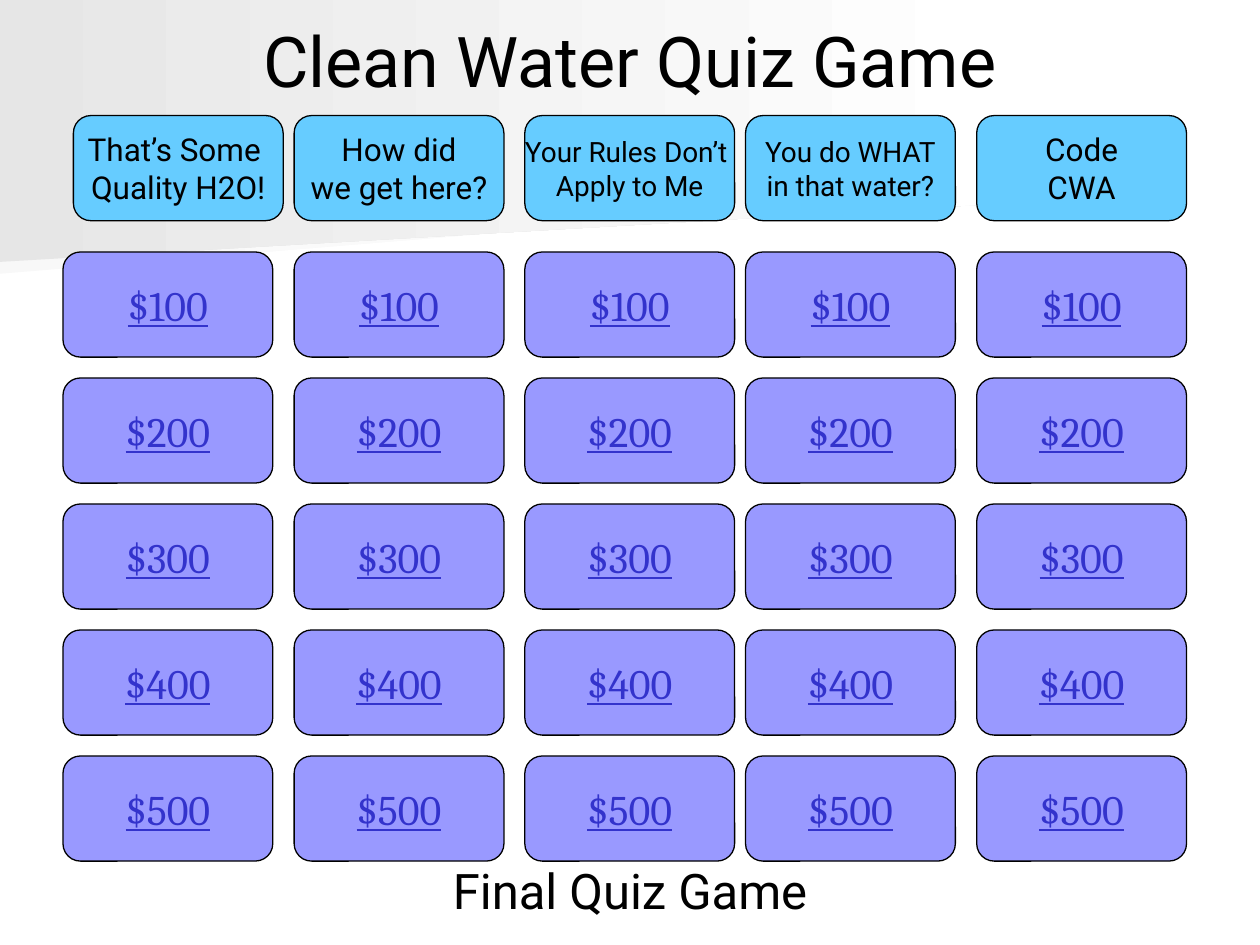
from pptx import Presentation
from pptx.dml.color import RGBColor
from pptx.enum.shapes import MSO_SHAPE
from pptx.enum.text import MSO_ANCHOR, PP_ALIGN
from pptx.util import Cm, Pt

BLACK = RGBColor(0x00, 0x00, 0x00)
WHITE = RGBColor(0xFF, 0xFF, 0xFF)
PALE = RGBColor(0xF8, 0xF8, 0xF8)
GRAY = RGBColor(0xE6, 0xE6, 0xE6)
SKY = RGBColor(0x66, 0xCC, 0xFF)
LILAC = RGBColor(0x99, 0x99, 0xFF)
INDIGO = RGBColor(0x33, 0x33, 0xCC)

CARD_W, CARD_H = 4.23, 2.12
ROW_STEP = 2.54
# Column offsets from the left edge of the board
COLUMNS = [0, 4.66, 9.31, 13.76, 18.42]
HEADER_INDENT = 0.21  # only the first header is indented

TOPICS = [
    ("That’s Some \nQuality H2O!", 18),
    ("How did\nwe get here?", 18),
    ("Your Rules Don’t \nApply to Me", 16),
    ("You do WHAT\nin that water?", 16),
    ("Code\nCWA", 18),
]
PRICES = ["$100", "$200", "$300", "$400", "$500"]


def write(shape, text, size, font="Roboto", color=BLACK, line=None, wrap=False):
    """Fill a shape with centred text, one paragraph per line."""
    frame = shape.text_frame
    frame.word_wrap = wrap
    frame.vertical_anchor = MSO_ANCHOR.MIDDLE
    frame.text = text
    for para in frame.paragraphs:
        para.alignment = PP_ALIGN.CENTER
        for run in para.runs:
            run.font.size = Pt(size)
            run.font.name = font
            run.font.color.rgb = color
            run.font.underline = line


def label(slide, box, text, size):
    """A wide line of text."""
    shape = slide.shapes.add_textbox(*map(Cm, box))
    write(shape, text, size, wrap=True)


def card(slide, left, top, fill, text, size, **style):
    """One rounded card of the board."""
    shape = slide.shapes.add_shape(
        MSO_SHAPE.FLOWCHART_ALTERNATE_PROCESS,
        Cm(left), Cm(top), Cm(CARD_W), Cm(CARD_H))
    shape.shadow.inherit = False
    shape.fill.solid()
    shape.fill.fore_color.rgb = fill
    shape.line.color.rgb = BLACK
    shape.line.width = Pt(0.75)
    write(shape, text, size, **style)


def beam(slide, left, top, points, shade):
    """A gray area that fades to white on the right."""
    spots = [(Cm(left + x), Cm(top + y)) for x, y in points]
    maker = slide.shapes.build_freeform(*spots[0], scale=1.0)
    maker.add_line_segments(spots[1:], close=True)
    shape = maker.convert_to_shape()
    shape.shadow.inherit = False
    shape.line.fill.background()
    shape.fill.gradient()
    shape.fill.gradient_angle = 0
    for stop, place, color in zip(shape.fill.gradient_stops, (0, 1), (shade, WHITE)):
        stop.position = place
        stop.color.rgb = color


def backdrop(slide, left, top):
    beam(slide, left, top + 2.57,
         [(19.76, 1.32), (0, 2.95), (0, 0), (19.79, 0), (19.76, 0.69)], PALE)
    beam(slide, left, top, [(20.12, 4.11), (0, 5.28), (0, 0), (20.12, 0)], GRAY)


def headers(slide, left, top):
    for i, (x, (text, size)) in enumerate(zip(COLUMNS, TOPICS)):
        shift = HEADER_INDENT if i == 0 else 0
        card(slide, left + x + shift, top, SKY, text, size)


def prices(slide, left, top):
    for x in COLUMNS:
        for row, price in enumerate(PRICES):
            card(slide, left + x, top + row * ROW_STEP, LILAC, price, 24,
                 font="Cambria", color=INDIGO, line=True)


def main():
    deck = Presentation()
    deck.slide_width, deck.slide_height = Cm(25.4), Cm(19.05)
    slide = deck.slides.add_slide(deck.slide_layouts[6])
    backdrop(slide, 0, 0)
    label(slide, (1.27, 0.53, 22.86, 1.35), "Clean Water Quiz Game", 40)
    headers(slide, 1.27, 2.33)
    prices(slide, 1.27, 5.08)
    label(slide, (1.27, 17.27, 22.86, 1.35), "Final Quiz Game", 28)
    deck.save("out.pptx")


if __name__ == "__main__":
    main()
